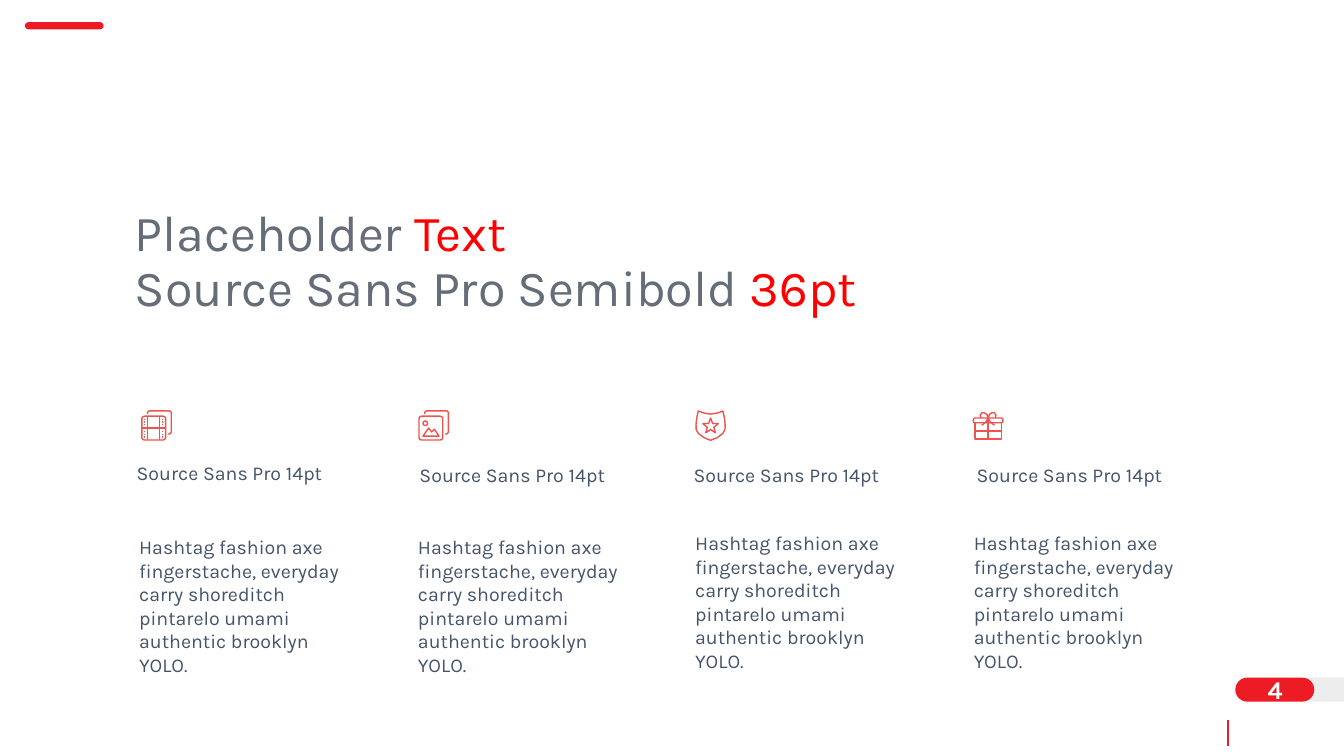
from dataclasses import dataclass
from math import cos, pi, sin

from lxml import etree
from pptx import Presentation
from pptx.dml.color import RGBColor
from pptx.enum.shapes import MSO_CONNECTOR, MSO_SHAPE
from pptx.enum.text import MSO_ANCHOR, MSO_AUTO_SIZE, PP_ALIGN
from pptx.oxml.ns import qn
from pptx.util import Pt

LINE = MSO_CONNECTOR.STRAIGHT
PILL, TAB = MSO_SHAPE.ROUNDED_RECTANGLE, MSO_SHAPE.ROUND_2_SAME_RECTANGLE
TOP = MSO_ANCHOR.TOP
LEFT, CENTER = PP_ALIGN.LEFT, PP_ALIGN.CENTER
FIXED = MSO_AUTO_SIZE.NONE

FONT = "Karla"
RED, CORAL, ACCENT = "ED1C24", "EF5350", "FF0000"
GREY, SLATE, ASH, WHITE = "656D78", "44546A", "A6A6A6", "FFFFFF"
HEAD = "Source Sans Pro 14pt"
BODY = ("Hashtag fashion axe fingerstache, everyday carry shoreditch "
        "pintarelo umami authentic brooklyn YOLO.")
TITLE = [("Placeholder ", "Text"), ("Source Sans Pro Semibold ", "36pt")]
EDGE, PITCH, ICON_TOP = 100.8, 198, 293

Path = list[tuple[float, float]]


@dataclass
class Column:
    icon: list[Path]
    head_x: float
    head_y: float
    body_x: float
    body_y: float


def ring(x: float, y: float, w: float, h: float, r: float) -> Path:
    """Return the closed outline of a rounded rectangle."""
    mids = [(x + w - r, y + h - r), (x + r, y + h - r), (x + r, y + r), (x + w - r, y + r)]
    pts = [(cx + r * cos((q + s / 6) * pi / 2), cy + r * sin((q + s / 6) * pi / 2))
           for q, (cx, cy) in enumerate(mids) for s in range(7)]
    return pts + pts[:1]


def flip(pts: Path, axis: float) -> Path:
    """Mirror points across a vertical axis."""
    return [(2 * axis - x, y) for x, y in pts]


def star(cx: float, cy: float, r: float) -> Path:
    radii = [r, r * 0.42] * 5 + [r]
    return [(cx + d * sin(i * pi / 5), cy - d * cos(i * pi / 5)) for i, d in enumerate(radii)]


def frames() -> list[Path]:
    """Return a rounded frame with a second one showing behind it."""
    back = [(4.6, 2.9), (4.6, 1.5), (5.7, 0.5), (20.4, 0.5), (21.5, 1.6),
            (21.5, 15.8), (20.4, 17), (19.2, 17)]
    return [ring(0.5, 4.3, 17, 17, 2), back]


def film() -> list[Path]:
    bars = [[(4.7, 4.3), (4.7, 21.3)], [(13.3, 4.3), (13.3, 21.3)], [(0.5, 12.8), (17.5, 12.8)]]
    holes = [[(x, y), (x, y + 0.9)] for x in (2.6, 15.4) for y in (6, 8, 10, 14.8, 16.8, 18.8)]
    return frames() + bars + holes


def photo() -> list[Path]:
    hills = [(3.3, 18.6), (7.4, 12.8), (9.5, 15.6), (11.4, 13.6), (14.8, 18.6), (3.3, 18.6)]
    return frames() + [ring(3.4, 7.8, 3.2, 3.2, 1.6), hills]


def shield() -> list[Path]:
    half = [(10.8, 2.8), (15.6, 2), (19.6, 0.6), (20.6, 5), (21.2, 10), (21.1, 13.8),
            (19.5, 16.6), (15.5, 19.6), (10.8, 21.5)]
    return [half + flip(half, 10.8)[::-1], star(10.8, 11.4, 5.8)]


def gift() -> list[Path]:
    loop = [(11, 5.6), (10.2, 3.2), (8.4, 1.8), (6.6, 1.9), (5.4, 3.4), (5.8, 5.6)]
    tail = [(11, 5.6), (9.4, 8.4), (6.5, 10.8)]
    box = [(1.6, 9), (1.6, 20.6), (20.4, 20.6), (20.4, 9)]
    ties = [[(11, 5.6), (11, 20.6)], [(1.6, 14.8), (20.4, 14.8)]]
    return [ring(0.5, 5.6, 21, 3.4, 1), box, loop, flip(loop, 11), tail, flip(tail, 11)] + ties


def rgb(code: str) -> RGBColor:
    return RGBColor.from_string(code)


def style(run, size: float, color: str, bold: bool = False) -> None:
    run.font.name, run.font.size = FONT, Pt(size)
    run.font.bold, run.font.color.rgb = bold, rgb(color)


def setup(frame, pads: tuple) -> None:
    """Set wrapping, insets and anchor of a text frame."""
    frame.word_wrap, frame.auto_size = True, FIXED
    frame.vertical_anchor = TOP
    frame.margin_left, frame.margin_top, frame.margin_right, frame.margin_bottom = map(Pt, pads)


def label(shapes, text: str, box: tuple, pads: tuple, size: float = 14, color: str = SLATE):
    """Add a text box and return its paragraph."""
    frame = shapes.add_textbox(*map(Pt, box)).text_frame
    setup(frame, pads)
    frame.text = text
    para = frame.paragraphs[0]
    style(para.runs[0], size, color)
    return para


def block(shapes, kind, box: tuple, color: str):
    """Add a filled shape with half-round corners."""
    shape = shapes.add_shape(kind, *map(Pt, box))
    shape.shadow.inherit = False
    shape.adjustments[0] = 0.5
    shape.fill.solid()
    shape.fill.fore_color.rgb = rgb(color)
    shape.line.fill.background()
    return shape


def sketch(shapes, icon: list[Path], x: float, y: float) -> None:
    """Draw an icon as one stroked outline, in hundredths of a point."""
    paths = [[(px * 100, py * 100) for px, py in path] for path in icon]
    pen = shapes.build_freeform(*paths[0][0], scale=Pt(1) / 100)
    for path in paths:
        pen.move_to(*path[0])
        pen.add_line_segments(path[1:], close=False)
    shape = pen.convert_to_shape(Pt(x), Pt(y))
    shape.shadow.inherit = False
    shape.fill.background()
    shape.line.color.rgb, shape.line.width = rgb(CORAL), Pt(1)


def frame_page(shapes) -> None:
    """Draw the red marks and the page number."""
    rule = shapes.add_connector(LINE, Pt(877), Pt(514), Pt(877), Pt(533))
    rule.line.color.rgb, rule.line.width = rgb(RED), Pt(1.25)
    etree.SubElement(rule._element.spPr, qn("a:effectLst"))
    tab = block(shapes, TAB, (935.4, 476.6, 17.2, 31.8), ASH)
    tab.rotation = 270
    tint = tab._element.spPr.find(qn("a:solidFill"))[0]
    etree.SubElement(tint, qn("a:alpha"), val="20000")
    block(shapes, PILL, (882.4, 484, 56.4, 17.2), RED)
    block(shapes, PILL, (17.8, 15.8, 56.2, 5.2), RED)
    para = label(shapes, "4", (884.8, 478, 52, 29), (7.2, 3.6, 7.2, 3.6), 18, WHITE)
    para.alignment = CENTER
    para.runs[0].font.bold = True


def fill_title(title) -> None:
    title.left, title.top, title.width, title.height = map(Pt, (89, 145, 552, 85.6))
    frame = title.text_frame
    setup(frame, (7.2, 3.6, 7.2, 3.6))
    frame.text = "\n".join(plain for plain, _ in TITLE)
    for para, (_, vivid) in zip(frame.paragraphs, TITLE):
        para.alignment, para.line_spacing = LEFT, 0.9
        para.space_before = Pt(0)
        para.add_run().text = vivid
        for run, color in zip(para.runs, (GREY, ACCENT)):
            style(run, 36, color)


def draw(shapes, col: Column, x: float) -> None:
    """Draw one column as a group."""
    group = shapes.add_group_shape().shapes
    sketch(group, col.icon, x, ICON_TOP)
    head = label(group, HEAD, (col.head_x, col.head_y, 181.4, 23), (8.6, 4.3, 8.6, 4.3))
    head.line_spacing = Pt(13.7)
    label(group, BODY, (col.body_x, col.body_y, 165.6, 67.7), (0, 3.6, 7.2, 3.6))


def main() -> None:
    deck = Presentation()
    deck.slide_width, deck.slide_height = Pt(960), Pt(540)
    slide = deck.slides.add_slide(deck.slide_layouts[5])
    frame_page(slide.shapes)
    fill_title(slide.shapes.title)
    cols = [Column(film(), 89, 328, 99.4, 378.6),
            Column(photo(), 291, 329.4, 298.6, 378.6),
            Column(shield(), 486.8, 329.2, 496.6, 375.8),
            Column(gift(), 689, 329.2, 695.6, 375.8)]
    for i, col in enumerate(cols):
        draw(slide.shapes, col, EDGE + i * PITCH)
    deck.save("out.pptx")


if __name__ == "__main__":
    main()
